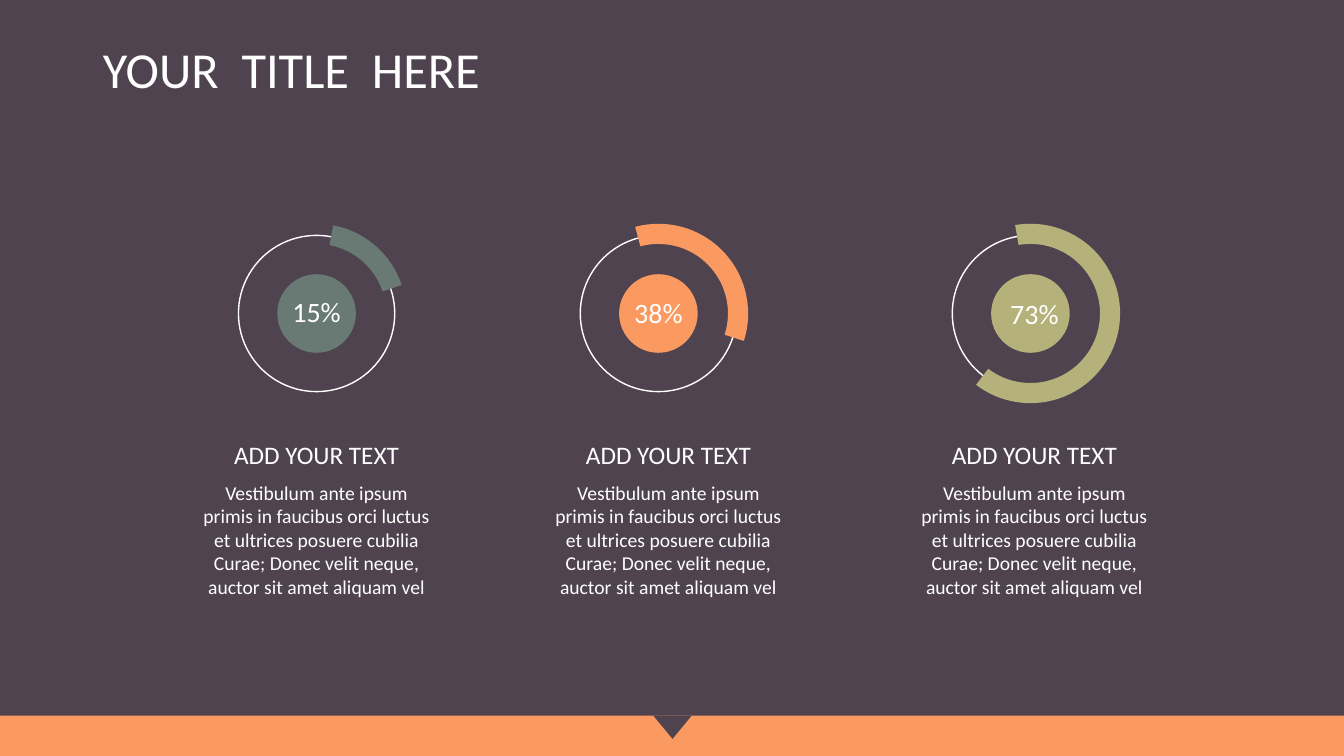
from lxml import etree
from pptx import Presentation
from pptx.dml.color import RGBColor
from pptx.enum.shapes import MSO_SHAPE as Shape
from pptx.enum.text import MSO_ANCHOR as Anchor, PP_ALIGN as Align
from pptx.util import Inches, Pt

COLORS = {
    "plum": "4F434F",
    "orange": "FA9A60",
    "olive": "B4B17A",
    "teal": "697A74",
    "white": "FFFFFF",
}
BODY = ("Vestibulum ante ipsum primis in faucibus orci luctus et ultrices "
        "posuere cubilia Curae; Donec velit neque, auctor sit amet aliquam vel")


def add_filled(kind, left, top, width, height, color):
    shape = slide.shapes.add_shape(
        kind, Inches(left), Inches(top), Inches(width), Inches(height))
    shape.shadow.inherit = False
    shape.line.fill.background()
    if color:
        shape.fill.solid()
        shape.fill.fore_color.rgb = RGBColor.from_string(COLORS[color])
    else:
        shape.fill.background()
    return shape


def write_text(shape, text, size, align, wrap=True):
    frame = shape.text_frame
    frame.word_wrap = wrap
    frame.vertical_anchor = Anchor.TOP
    paragraph = frame.paragraphs[0]
    paragraph.alignment = align
    run = paragraph.add_run()
    run.text = text
    run.font.name = "Calibri"
    run.font.size = Pt(size)
    run.font.color.rgb = RGBColor.from_string(COLORS["white"])
    return paragraph


presentation = Presentation()
presentation.slide_width = Inches(13.33)
presentation.slide_height = Inches(7.5)
slide = presentation.slides.add_slide(presentation.slide_layouts[5])
slide.background.fill.solid()
slide.background.fill.fore_color.rgb = RGBColor.from_string(COLORS["plum"])

# Footer band with its notch
add_filled(Shape.RECTANGLE, 0, 7.1, 13.33, 0.4, "orange")
notch = add_filled(Shape.ISOSCELES_TRIANGLE, 6.48, 7.1, 0.38, 0.23, "plum")
notch.rotation = 180

# Title
title = slide.shapes.title
title.left, title.top = Inches(0.92), Inches(0.4)
title.width, title.height = Inches(11.5), Inches(1.45)
write_text(title, "YOUR  TITLE  HERE", 36, Align.LEFT).line_spacing = 0.9

# Gauges: label, color, dial center, label center and top, text center,
# then arc start and end in degrees clockwise from three o'clock
gauges = [
    ("15%", "teal", 3.14, 3.14, 2.87, 3.14, 280.7, 341.5),
    ("38%", "orange", 6.53, 6.53, 2.88, 6.63, 255, 17.8),
    ("73%", "olive", 10.22, 10.26, 2.89, 10.26, 260.2, 127.3),
]
CENTER_Y = 3.11
RING, ARC, DOT = 1.55, 1.78, 0.78
BAND = 0.2

for label, color, dial_x, label_x, label_top, text_x, start, end in gauges:
    # Thin ring, thick arc and center dot
    ring = add_filled(Shape.OVAL, dial_x - RING / 2, CENTER_Y - RING / 2,
                      RING, RING, None)
    ring.line.color.rgb = RGBColor.from_string(COLORS["white"])
    ring.line.width = Pt(1)
    arc = add_filled(Shape.BLOCK_ARC, dial_x - ARC / 2, CENTER_Y - ARC / 2,
                     ARC, ARC, color)
    # Angles are stored in 60000ths of a degree, adjustments in 100000ths
    arc.adjustments[0] = start * 0.6
    arc.adjustments[1] = end * 0.6
    arc.adjustments[2] = BAND / ARC
    add_filled(Shape.OVAL, dial_x - DOT / 2, CENTER_Y - DOT / 2,
               DOT, DOT, color)

    # Percentage, heading and description
    for text, size, center, top, width, height, wrap in [
        (label, 20, label_x, label_top, 0.69, 0.44, False),
        ("ADD YOUR TEXT", 18, text_x, 4.31, 2.26, 0.4, True),
        (BODY, 14, text_x, 4.72, 2.53, 1.28, True),
    ]:
        box = slide.shapes.add_textbox(
            Inches(center - width / 2), Inches(top),
            Inches(width), Inches(height))
        write_text(box, text, size, Align.CENTER, wrap)

presentation.save("out.pptx")
